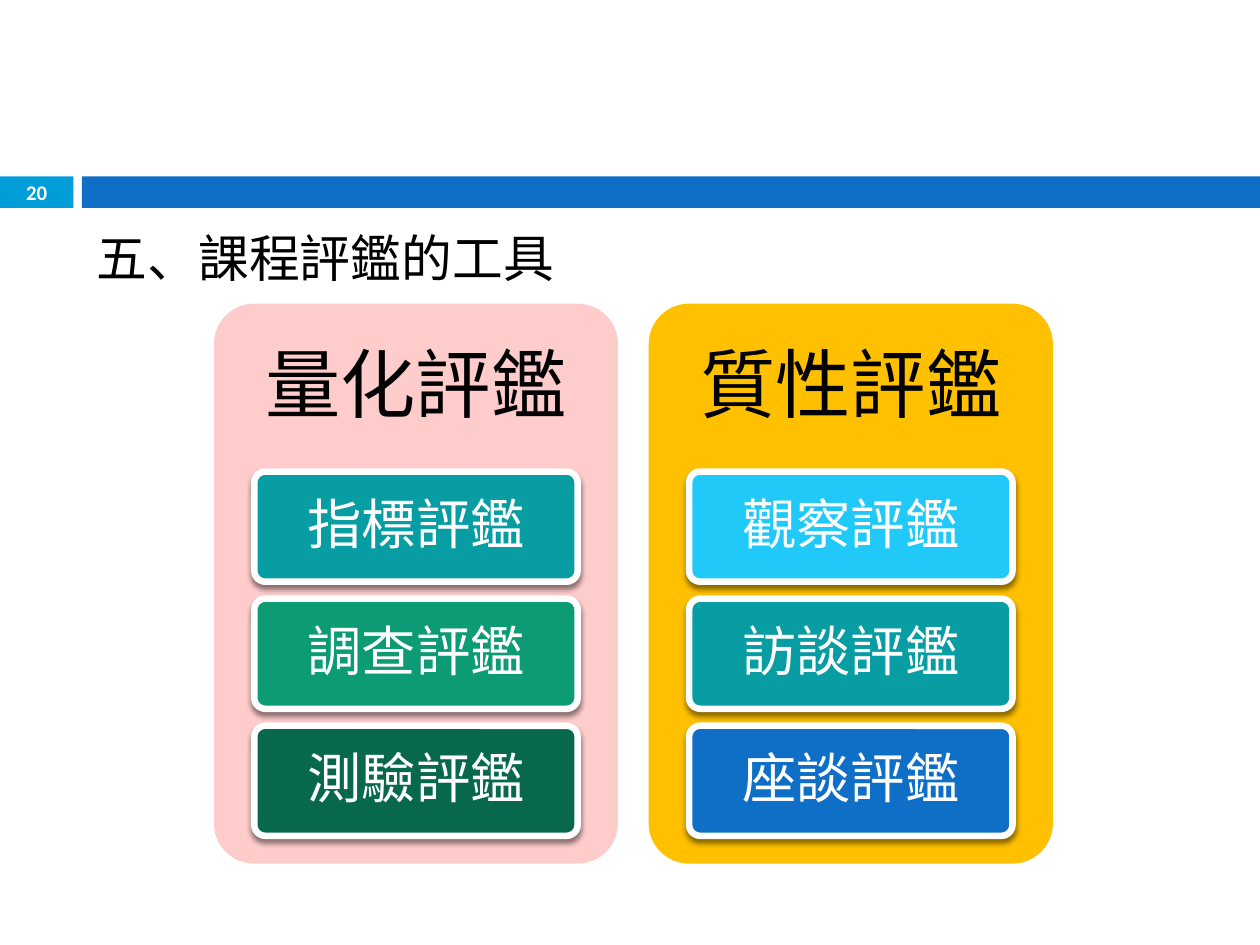
import pptx
import pptx.dml.color
import pptx.enum.shapes
import pptx.enum.text
import pptx.oxml
import pptx.oxml.ns
import pptx.util
from dataclasses import dataclass

Pt = pptx.util.Pt
SHAPE = pptx.enum.shapes.MSO_SHAPE
ALIGN = pptx.enum.text.PP_ALIGN
ANCHOR = pptx.enum.text.MSO_ANCHOR


@dataclass(frozen=True)
class Theme:
    font: str = "Calibri"
    dark: str = "000000"
    light: str = "FFFFFF"
    cyan: str = "009DD9"
    blue: str = "0F6FC6"
    sky: str = "20C9F8"
    teal: str = "089CA3"
    green: str = "0C9B74"
    forest: str = "08684E"
    pink: str = "FFCCCC"
    amber: str = "FFC000"
    number_size: float = 11.9
    body_size: float = 29
    heading_size: float = 43
    card_size: float = 31


THEME = Theme()

SHADOW = (
    '<a:effectLst xmlns:a="http://schemas.openxmlformats.org/drawingml/2006/main">'
    '<a:outerShdw blurRad="38100" dist="30480" dir="5400000" rotWithShape="0">'
    '<a:srgbClr val="000000"><a:alpha val="45000"/></a:srgbClr>'
    '</a:outerShdw></a:effectLst>'
)


def rgb(color):
    return pptx.dml.color.RGBColor.from_string(color)


def add_block(slide, kind, box, fill):
    sp = slide.shapes.add_shape(kind, *map(Pt, box))
    sp.shadow.inherit = False
    sp.fill.solid()
    sp.fill.fore_color.rgb = rgb(fill)
    sp.line.fill.background()
    if kind == SHAPE.ROUNDED_RECTANGLE:
        sp.adjustments[0] = 0.1
    return sp


def set_text(sp, text, size, color, align=ALIGN.CENTER, anchor=ANCHOR.MIDDLE,
             inset=(7.2, 3.6), bold=False):
    tf = sp.text_frame
    tf.text = text
    tf.word_wrap = True
    tf.auto_size = pptx.enum.text.MSO_AUTO_SIZE.NONE
    tf.vertical_anchor = anchor
    tf.margin_left = tf.margin_right = Pt(inset[0])
    tf.margin_top = tf.margin_bottom = Pt(inset[1])
    p = tf.paragraphs[0]
    p.alignment = align
    font = p.runs[0].font
    font.name, font.size, font.bold = THEME.font, Pt(size), bold
    font.color.rgb = rgb(color)
    return p


def add_header_band(slide, box, number):
    left, top, width, height = box
    number_width, gap = 42, 4.8
    bar_left = left + number_width + gap
    tag = add_block(slide, SHAPE.RECTANGLE, (left, top, number_width, height), THEME.cyan)
    set_text(tag, number, THEME.number_size, THEME.light, inset=(0, 0), bold=True)
    add_block(slide, SHAPE.RECTANGLE,
              (bar_left, top, left + width - bar_left, height), THEME.blue)


def add_body(slide, box, text):
    body = slide.placeholders[1]
    body.left, body.top, body.width, body.height = map(Pt, box)
    p = set_text(body, text, THEME.body_size, THEME.dark, ALIGN.LEFT, ANCHOR.TOP)
    p.space_before = Pt(7)
    # No bullet and no hanging indent
    pPr = p._p.get_or_add_pPr()
    pPr.set("marL", "0")
    pPr.set("indent", "0")
    pPr.append(pptx.oxml.parse_xml(
        '<a:buNone xmlns:a="http://schemas.openxmlformats.org/drawingml/2006/main"/>'))


def add_card(slide, box, text, fill):
    card = add_block(slide, SHAPE.ROUNDED_RECTANGLE, box, fill)
    card.line.color.rgb = rgb(THEME.light)
    card.line.width = Pt(3.75)
    spPr = card._element.spPr
    spPr.replace(spPr.find(pptx.oxml.ns.qn("a:effectLst")), pptx.oxml.parse_xml(SHADOW))
    set_text(card, text, THEME.card_size, THEME.light, inset=(8, 6)).line_spacing = 0.9


def add_panel(slide, box, heading, fill, cards):
    left, top, width, height = box
    add_block(slide, SHAPE.ROUNDED_RECTANGLE, box, fill)

    # Heading fills the top 30 percent
    heading_height = 0.3 * height
    title = slide.shapes.add_textbox(*map(Pt, (left, top, width, heading_height)))
    set_text(title, heading, THEME.heading_size, THEME.dark,
             inset=(13, 13)).line_spacing = 0.9

    # Cards are centred and evenly stacked below it
    card_width, card_height, pitch = 0.8 * width, 62.9, 72.6
    for i, (text, color) in enumerate(cards):
        add_card(slide, (left + (width - card_width) / 2,
                         top + heading_height + i * pitch,
                         card_width, card_height), text, color)


def main():
    prs = pptx.Presentation()
    prs.slide_width, prs.slide_height = Pt(720), Pt(540)
    slide = prs.slides.add_slide(prs.slide_layouts[1])
    title = slide.shapes.title._element
    title.getparent().remove(title)

    add_header_band(slide, (0, 100.8, 720, 18), "20")
    add_body(slide, (48.2, 126, 642, 354), "五、課程評鑑的工具")

    panels = [
        ("量化評鑑", THEME.pink, [("指標評鑑", THEME.teal),
                              ("調查評鑑", THEME.green),
                              ("測驗評鑑", THEME.forest)]),
        ("質性評鑑", THEME.amber, [("觀察評鑑", THEME.sky),
                               ("訪談評鑑", THEME.teal),
                               ("座談評鑑", THEME.blue)]),
    ]
    for i, panel in enumerate(panels):
        add_panel(slide, (122.2 + i * 248.5, 173.5, 231, 320), *panel)

    prs.save("out.pptx")


if __name__ == "__main__":
    main()
